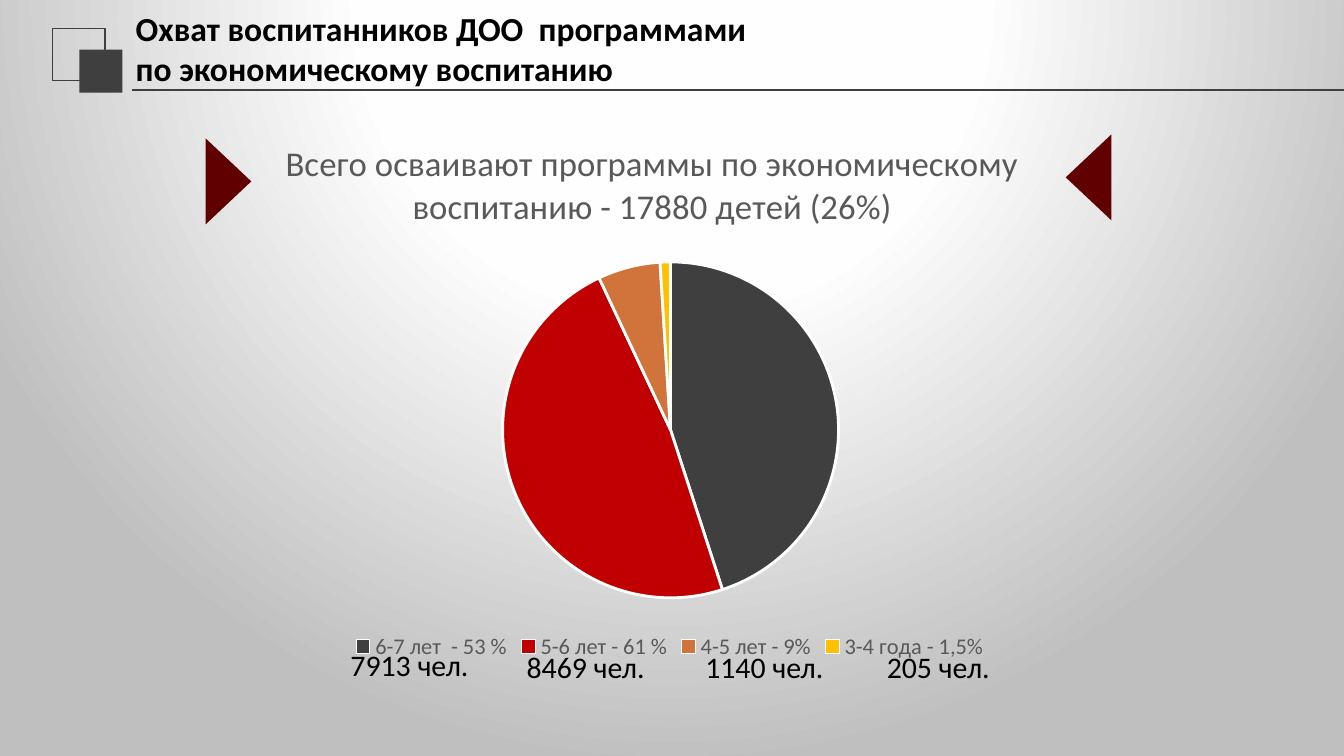
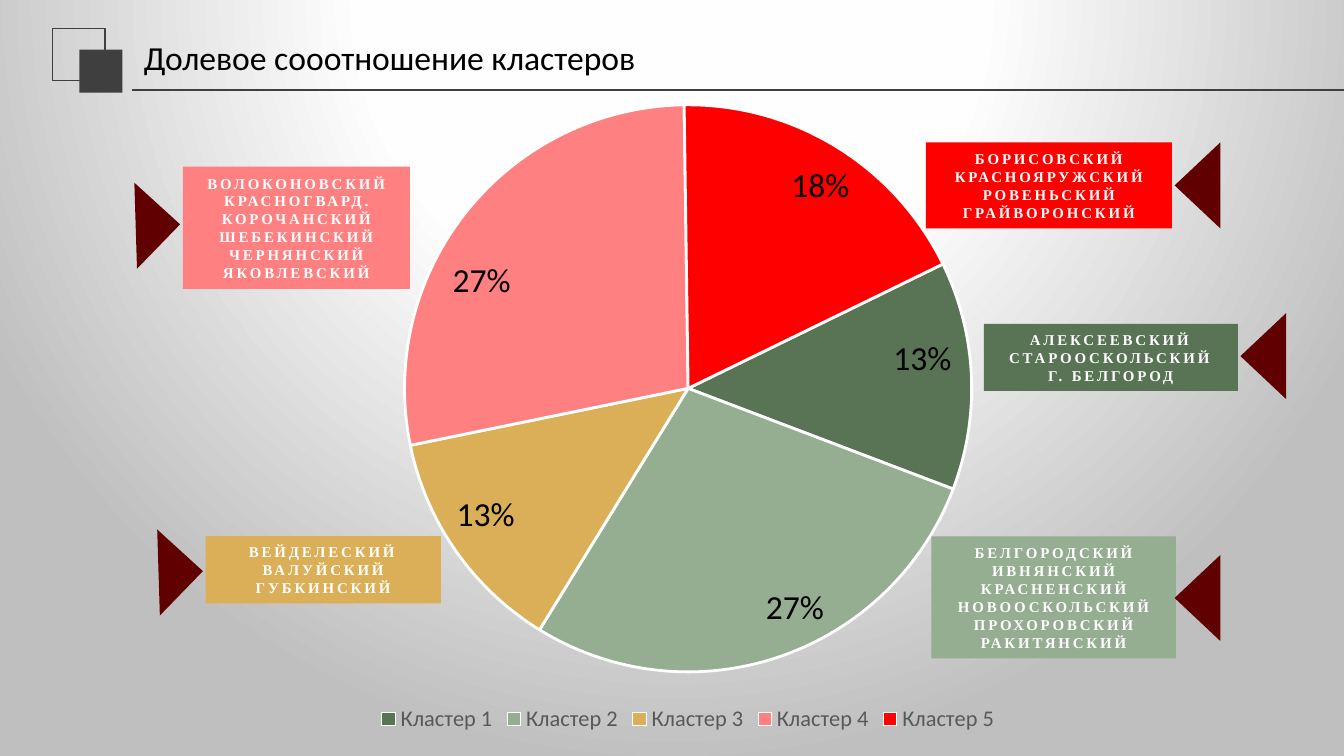
"""Build two slides on economic education coverage and cluster shares."""
from dataclasses import dataclass

from lxml import etree
from pptx import Presentation
from pptx import util as u
from pptx.chart.data import CategoryChartData
from pptx.dml.color import RGBColor
from pptx.enum import chart as charts, shapes, text
from pptx.oxml import parse_xml
from pptx.oxml.ns import nsdecls, qn


@dataclass(frozen=True)
class Theme:
    font: str = "Calibri"
    label_font: str = "Times New Roman"
    black: str = "000000"
    white: str = "FFFFFF"
    dark: str = "3F3F3F"
    grey: str = "595959"
    marker: str = "600000"
    title_size: float = 18
    chart_title_size: float = 18.6
    legend_size: float = 12
    chart_size: float = 10
    label_size: float = 8


theme = Theme()


def write(shape, paragraphs, size, color=theme.black, font=theme.font, bold=False,
          align=text.PP_ALIGN.LEFT):
    """Fill a shape with paragraphs; a newline inside one is a line break."""
    frame = shape.text_frame
    frame.word_wrap = True
    for index, content in enumerate(paragraphs):
        paragraph = frame.add_paragraph() if index else frame.paragraphs[0]
        paragraph.alignment = align
        for row, line in enumerate(content.split("\n")):
            if row:
                paragraph.add_line_break()
            run = paragraph.add_run()
            run.text = line
            run.font.name, run.font.size, run.font.bold = font, u.Pt(size), bold
            run.font.color.rgb = RGBColor.from_string(color)


def set_layout(parent, index, **values):
    """Give a chart part a manual layout in fractions of the chart."""
    for old in parent.findall(qn("c:layout")):
        parent.remove(old)
    layout = parse_xml(f"<c:layout {nsdecls('c')}><c:manualLayout/></c:layout>")
    if "w" in values:
        etree.SubElement(layout[0], qn("c:layoutTarget")).set("val", "inner")
    for axis in "xy":
        etree.SubElement(layout[0], qn(f"c:{axis}Mode")).set("val", "edge")
    for name, value in values.items():
        etree.SubElement(layout[0], qn(f"c:{name}")).set("val", f"{value:.4f}")
    parent.insert(index, layout)


presentation = Presentation()
presentation.slide_width = u.Inches(10)
presentation.slide_height = u.Inches(10 * 9 / 16)
layout = presentation.slide_layouts[5]

layout.background.fill.gradient()
gradient = next(layout.element.iter(qn("a:gradFill")))
stops = "".join(f'<a:gs pos="{place}"><a:srgbClr val="{color}"/></a:gs>'
                for place, color in ((0, theme.white), (40000, "FEFEFE"), (100000, "BFBFBF")))
gradient.getparent().replace(gradient, parse_xml(
    f'<a:gradFill {nsdecls("a")} rotWithShape="1"><a:gsLst>{stops}</a:gsLst>'
    '<a:path path="circle"><a:fillToRect l="50000" t="-80000" r="50000" b="180000"/>'
    '</a:path></a:gradFill>'))

slides = [presentation.slides.add_slide(layout) for _ in range(2)]

outline_square, solid_square = [
    slides[0].shapes.add_shape(shapes.MSO_SHAPE.RECTANGLE, *map(u.Inches, box))
    for box in ((0.39, 0.21, 0.39, 0.39), (0.59, 0.37, 0.32, 0.32))]
outline_square.fill.background()
outline_square.line.color.rgb = RGBColor.from_string(theme.dark)
outline_square.line.width = u.Pt(0.75)
solid_square.fill.solid()
solid_square.fill.fore_color.rgb = RGBColor.from_string(theme.dark)
solid_square.line.fill.background()
title_rule = slides[0].shapes.add_connector(
    shapes.MSO_CONNECTOR.STRAIGHT, *map(u.Inches, (0.98, 0.67, 10.12, 0.67)))
title_rule.line.color.rgb = RGBColor.from_string(theme.dark)
title_rule.line.width = u.Pt(1.25)
etree.SubElement(title_rule.element.spPr, qn("a:effectLst"))
for shape in (outline_square, solid_square):
    shape.shadow.inherit = False
for shape in (outline_square, solid_square, title_rule):
    layout.shapes.element.append(shape.element)

titles = [
    (["Охват воспитанников ДОО  программами", "по экономическому воспитанию"],
     (0.91, 0.14, 8.07, 0.43), True),
    (["Долевое сооотношение кластеров"], (0.97, 0.21, 4.66, 0.43), False),
]
for slide, (lines, box, bold) in zip(slides, titles):
    title = slide.shapes.title
    title.left, title.top, title.width, title.height = map(u.Inches, box)
    title.text_frame.auto_size = text.MSO_AUTO_SIZE.NONE
    title.text_frame.vertical_anchor = text.MSO_ANCHOR.MIDDLE
    write(title, lines, theme.title_size, bold=bold)

pies = [
    dict(box=(0.97, 0.93, 8.03, 4.02), center=(4.99, 3.2), radius=1.25, start=0,
         title=["Всего осваивают программы по экономическому",
                "воспитанию - 17880 детей (26%)"],
         slices=[("6-7 лет  - 53 %", 45, theme.dark), ("5-6 лет - 61 %", 48, "C00000"),
                 ("4-5 лет - 9%", 6, "D1743B"), ("3-4 года - 1,5%", 1, "FFC000")]),
    dict(box=(1.22, 0.65, 7.8, 4.84), center=(5.12, 2.89), radius=2.11, start=64, title=[],
         slices=[(f"Кластер {number}", value, color) for number, (value, color) in enumerate(
             [(13, "597355"), (28, "95AD91"), (13, "DBAF57"), (28, "FF8080"),
              (18, "FF0000")], 1)]),
]
for slide, pie in zip(slides, pies):
    left, top, width, height = pie["box"]
    data = CategoryChartData()
    data.categories = [name for name, _, _ in pie["slices"]]
    data.add_series("Series 1", [value for _, value, _ in pie["slices"]])
    chart = slide.shapes.add_chart(
        charts.XL_CHART_TYPE.PIE, *map(u.Inches, pie["box"]), data).chart
    chart.font.name, chart.font.size = theme.font, u.Pt(theme.chart_size)
    chart.font.color.rgb = RGBColor.from_string(theme.black)
    chart.element.find(qn("c:txPr")).addprevious(parse_xml(
        f"<c:spPr {nsdecls('c', 'a')}><a:noFill/><a:ln><a:noFill/></a:ln></c:spPr>"))
    chart.has_legend = True
    chart.legend.position = charts.XL_LEGEND_POSITION.BOTTOM
    chart.legend.include_in_layout = False
    chart.legend.font.name, chart.legend.font.size = theme.font, u.Pt(theme.legend_size)
    chart.legend.font.color.rgb = RGBColor.from_string(theme.grey)
    chart.has_title = bool(pie["title"])
    if chart.has_title:
        write(chart.chart_title, pie["title"], theme.chart_title_size, theme.grey,
              align=text.PP_ALIGN.CENTER)
        set_layout(chart.chart_title.element, 1, x=0.14, y=0.02)

    plot = chart.plots[0]
    plot.vary_by_categories = True
    for index, (_, _, color) in enumerate(pie["slices"]):
        point = plot.series[0].points[index]
        point.format.fill.solid()
        point.format.fill.fore_color.rgb = RGBColor.from_string(color)
        point.format.line.color.rgb = RGBColor.from_string(theme.white)
        point.format.line.width = u.Pt(1.5)
    pie_element = next(chart.element.iter(qn("c:pieChart")))
    for angle in pie_element.findall(qn("c:firstSliceAng")):
        pie_element.remove(angle)
    etree.SubElement(pie_element, qn("c:firstSliceAng")).set("val", str(pie["start"]))
    center_x, center_y = pie["center"]
    radius = pie["radius"]
    set_layout(pie_element.getparent(), 0,
               x=(center_x - radius - left) / width, y=(center_y - radius - top) / height,
               w=2 * radius / width, h=2 * radius / height)

values = [
    (16, 0.37, [("7913 чел.", 2.51, 4.76, 1.26), ("8469 чел.", 3.82, 4.78, 1.28),
                ("1140 чел.", 5.15, 4.78, 1.1), ("205 чел.", 6.5, 4.78, 1.1)]),
    (18, 0.4, [("13%", 6.55, 2.46, 0.87), ("27%", 3.27, 1.88, 0.87),
               ("13%", 3.3, 3.62, 0.87), ("27%", 5.6, 4.31, 0.87),
               ("18%", 5.79, 1.17, 0.87)]),
]
for slide, (size, height, items) in zip(slides, values):
    for value, left, top, width in items:
        box = slide.shapes.add_textbox(*map(u.Inches, (left, top, width, height)))
        write(box, [value], size)

cluster_boxes = [
    ((7.32, 2.41, 1.89, 0.5), ["АЛЕКСЕЕВСКИЙ\nСТАРООСКОЛЬСКИЙ\nГ. БЕЛГОРОД"]),
    ((6.93, 3.99, 1.82, 0.91), ["БЕЛГОРОДСКИЙ", "ИВНЯНСКИЙ", "КРАСНЕНСКИЙ",
                                "НОВООСКОЛЬСКИЙ", "ПРОХОРОВСКИЙ", "РАКИТЯНСКИЙ"]),
    ((1.53, 3.99, 1.75, 0.5), ["ВЕЙДЕЛЕСКИЙ ВАЛУЙСКИЙ", "ГУБКИНСКИЙ"]),
    ((1.36, 1.24, 1.69, 0.91), ["ВОЛОКОНОВСКИЙ", "КРАСНОГВАРД.", "КОРОЧАНСКИЙ",
                                "ШЕБЕКИНСКИЙ", "ЧЕРНЯНСКИЙ", "ЯКОВЛЕВСКИЙ"]),
    ((6.89, 1.06, 1.83, 0.64), ["БОРИСОВСКИЙ", "КРАСНОЯРУЖСКИЙ", "РОВЕНЬСКИЙ",
                                "ГРАЙВОРОНСКИЙ"]),
]
for (box, districts), (_, _, color) in zip(cluster_boxes, pies[1]["slices"]):
    label = slides[1].shapes.add_shape(shapes.MSO_SHAPE.RECTANGLE, *map(u.Inches, box))
    label.shadow.inherit = False
    label.fill.solid()
    label.fill.fore_color.rgb = RGBColor.from_string(color)
    label.line.fill.background()
    write(label, districts, theme.label_size, theme.white, theme.label_font, True,
          text.PP_ALIGN.CENTER)
    for properties in label.element.iter(qn("a:rPr")):
        properties.set("spc", "150")

pointing_left = [(0.34, -0.32), (0.34, 0.32)]
pointing_right = [(-0.34, 0.32), (-0.34, -0.32)]
tilted_right = [(-0.32, 0.33), (-0.34, -0.31)]
markers = [
    (slides[0], 7.93, 1.32, pointing_left), (slides[0], 1.87, 1.35, pointing_right),
    (slides[1], 8.74, 1.38, pointing_left), (slides[1], 9.23, 2.65, pointing_left),
    (slides[1], 8.74, 4.45, pointing_left), (slides[1], 1.34, 1.67, tilted_right),
    (slides[1], 1.51, 4.25, tilted_right),
]
for slide, tip_x, tip_y, corners in markers:
    builder = slide.shapes.build_freeform(u.Inches(tip_x), u.Inches(tip_y))
    builder.add_line_segments(
        [(u.Inches(tip_x + x), u.Inches(tip_y + y)) for x, y in corners], close=True)
    marker = builder.convert_to_shape()
    marker.shadow.inherit = False
    marker.fill.solid()
    marker.fill.fore_color.rgb = RGBColor.from_string(theme.marker)
    marker.line.fill.background()

presentation.save("out.pptx")
